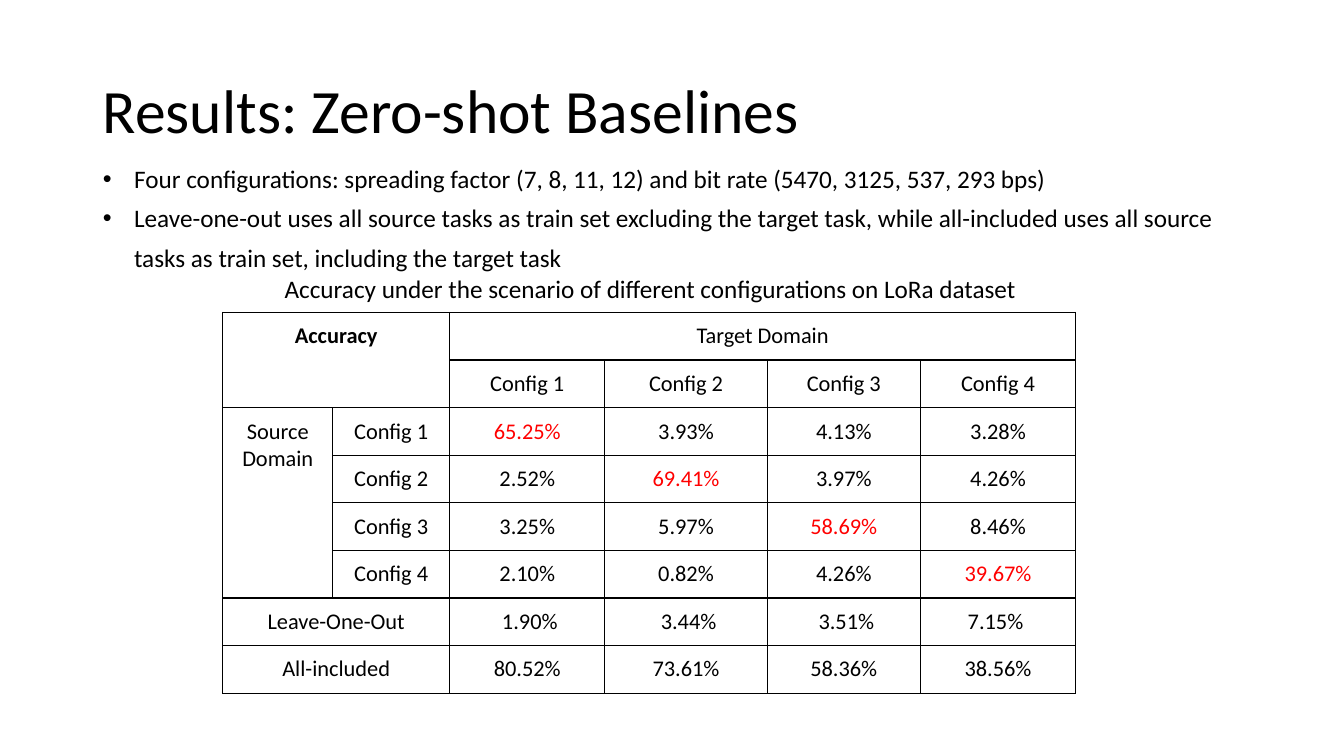
from lxml.etree import SubElement
from pptx import Presentation
from pptx.dml.color import RGBColor
from pptx.enum.text import MSO_ANCHOR, MSO_AUTO_SIZE, PP_ALIGN
from pptx.oxml.ns import qn
from pptx.util import Inches, Pt

COLORS = {"text": "000000", "highlight": "FF0000", "border": "000000"}

BULLETS = [
    "Four configurations: spreading factor (7, 8, 11, 12) and bit rate (5470, 3125, 537, 293 bps)",
    "Leave-one-out uses all source tasks as train set excluding the target task, "
    "while all-included uses all source tasks as train set, including the target task",
]
CAPTION = "Accuracy under the scenario of different configurations on LoRa dataset"

CONFIGS = [f"Config {number}" for number in range(1, 5)]
ACCURACY = [
    ["65.25%", "3.93%", "4.13%", "3.28%"],
    ["2.52%", "69.41%", "3.97%", "4.26%"],
    ["3.25%", "5.97%", "58.69%", "8.46%"],
    ["2.10%", "0.82%", "4.26%", "39.67%"],
]
TABLE_ROWS = [
    ["Accuracy", "", "Target Domain", "", "", ""],
    ["", "", *CONFIGS],
    *[["" if index else "Source Domain", config, *values]
      for index, (config, values) in enumerate(zip(CONFIGS, ACCURACY))],
    ["Leave-One-Out", "", " 1.90%", " 3.44%", " 3.51%", "7.15% "],
    ["All-included", "", "80.52%", "73.61%", "58.36%", "38.56%"],
]
COLUMN_WIDTHS = [1.09, 1.16, 1.54, 1.61, 1.52, 1.54]
ROW_HEIGHT = 0.47
# First and last (row, column) of each merged block
MERGES = [((0, 0), (1, 1)), ((0, 2), (0, 5)), ((2, 0), (5, 0)),
          ((6, 0), (6, 1)), ((7, 0), (7, 1))]
CELL_FORMATS = {
    (0, 0): {"bold": True},
    **{(index + 2, index + 2): {"color": "highlight"} for index in range(len(CONFIGS))},
}


def set_attributes(target, values):
    for name, value in values.items():
        setattr(target, name, value)


class SlideBuilder:
    font_name = "Calibri"
    cell_margins = {"margin_left": Inches(0.07), "margin_right": Inches(0.07),
                    "margin_top": Inches(0.1), "margin_bottom": Inches(0.1)}

    def __init__(self, presentation):
        self.slide = presentation.slides.add_slide(presentation.slide_layouts[1])

    def place(self, shape, left, top, width, height):
        set_attributes(shape, {"left": Inches(left), "top": Inches(top),
                               "width": Inches(width), "height": Inches(height)})

    def add_text(self, paragraph, text, size, color="text", bold=False, **paragraph_format):
        set_attributes(paragraph, paragraph_format)
        run = paragraph.add_run()
        run.text = text
        set_attributes(run.font, {"name": self.font_name, "size": Pt(size), "bold": bold})
        run.font.color.rgb = RGBColor.from_string(COLORS[color])

    def title(self, text, *position):
        shape = self.slide.shapes.title
        self.place(shape, *position)
        set_attributes(shape.text_frame, {"vertical_anchor": MSO_ANCHOR.MIDDLE,
                                          "auto_size": MSO_AUTO_SIZE.NONE})
        self.add_text(shape.text_frame.paragraphs[0], text, 44,
                      alignment=PP_ALIGN.LEFT, line_spacing=0.9)

    def bullets(self, items, *position):
        shape = self.slide.placeholders[1]
        self.place(shape, *position)
        frame = shape.text_frame
        set_attributes(frame, {"vertical_anchor": MSO_ANCHOR.TOP,
                               "auto_size": MSO_AUTO_SIZE.NONE})
        for index, item in enumerate(items):
            paragraph = frame.add_paragraph() if index else frame.paragraphs[0]
            set_attributes(paragraph, {"line_spacing": 1.3, "space_before": Pt(0)})
            properties = paragraph._p.get_or_add_pPr()
            properties.set("marL", str(Inches(0.31)))
            properties.set("indent", str(-Inches(0.31)))
            SubElement(properties, qn("a:buFont"), typeface="Arial")
            SubElement(properties, qn("a:buChar"), char="•")
            self.add_text(paragraph, item, 18)

    def caption(self, text, *position):
        frame = self.slide.shapes.add_textbox(*map(Inches, position)).text_frame
        frame.word_wrap = True
        self.add_text(frame.paragraphs[0], text, 18, alignment=PP_ALIGN.CENTER)

    def border(self, cell):
        properties = cell._tc.get_or_add_tcPr()
        for side in ("L", "R", "T", "B"):
            line = SubElement(properties, qn(f"a:ln{side}"), w=str(Pt(1)))
            fill = SubElement(line, qn("a:solidFill"))
            SubElement(fill, qn("a:srgbClr"), val=COLORS["border"])

    def table(self, rows, left, top):
        table = self.slide.shapes.add_table(
            len(rows), len(COLUMN_WIDTHS), Inches(left), Inches(top),
            Inches(sum(COLUMN_WIDTHS)), Inches(ROW_HEIGHT * len(rows))).table
        set_attributes(table, {"first_row": False, "horz_banding": False})
        for column, width in zip(table.columns, COLUMN_WIDTHS):
            column.width = Inches(width)
        for row in table.rows:
            row.height = Inches(ROW_HEIGHT)
        for first, last in MERGES:
            table.cell(*first).merge(table.cell(*last))
        for row_index, row in enumerate(rows):
            for column_index, text in enumerate(row):
                cell = table.cell(row_index, column_index)
                self.border(cell)
                cell.fill.background()
                if not cell.is_spanned:
                    set_attributes(cell, self.cell_margins)
                    self.add_text(cell.text_frame.paragraphs[0], text, 16,
                                  alignment=PP_ALIGN.CENTER,
                                  **CELL_FORMATS.get((row_index, column_index), {}))


def main():
    presentation = Presentation()
    set_attributes(presentation, {"slide_width": Inches(13.33), "slide_height": Inches(7.5)})
    builder = SlideBuilder(presentation)
    builder.title("Results: Zero-shot Baselines", 0.92, 0.4, 11.5, 1.45)
    builder.table(TABLE_ROWS, 2.21, 3.1)
    builder.caption(CAPTION, 1.67, 2.66, 9.56, 0.4)
    builder.bullets(BULLETS, 0.92, 1.48, 11.67, 1.25)
    presentation.save("out.pptx")


if __name__ == "__main__":
    main()
